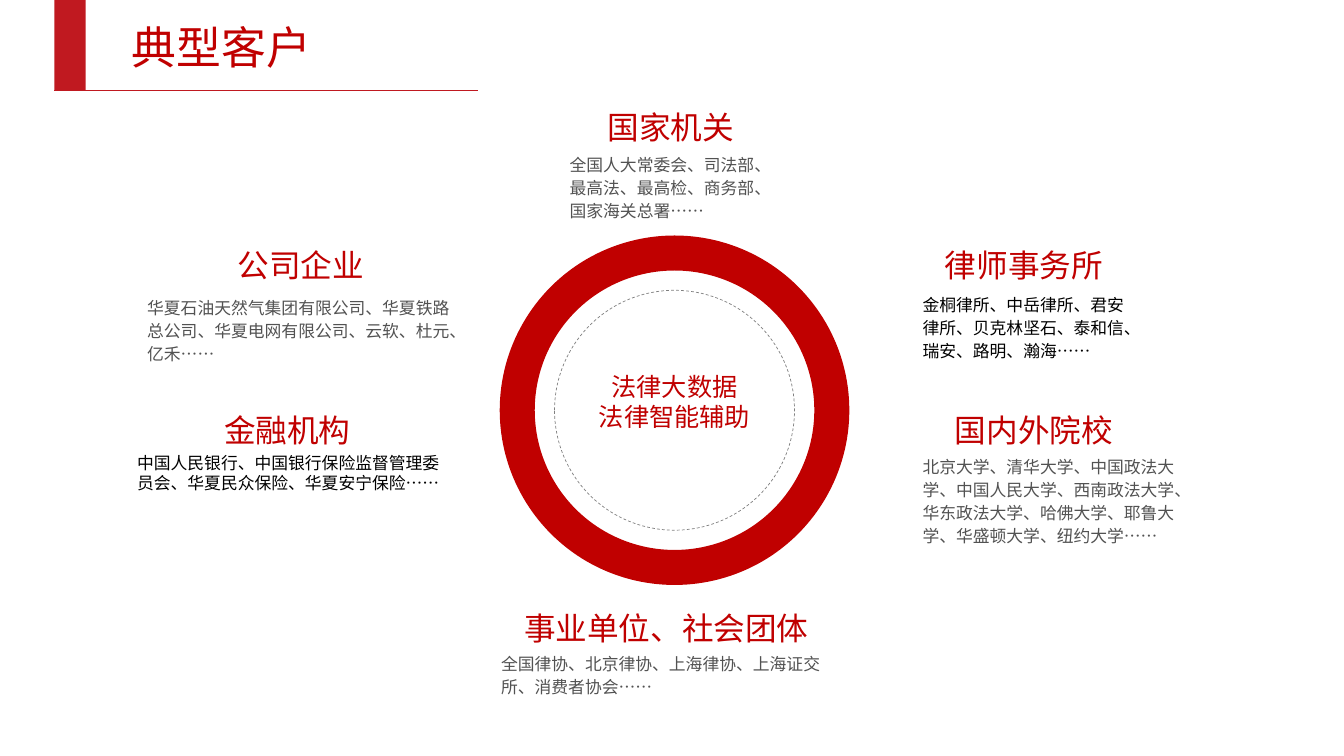
from pptx import Presentation
from pptx.dml.color import RGBColor
from pptx.enum.dml import MSO_LINE
from pptx.enum.shapes import MSO_CONNECTOR, MSO_SHAPE
from pptx.enum.text import PP_ALIGN
from pptx.oxml.ns import qn
from pptx.util import Inches, Pt
from lxml import etree

THEME = {
    "red": "C00000", "bar": "C01920", "grey": "525252", "black": "000000", "dash": "808080",
    "heading_font": "Noto Sans CJK SC", "body_font": "Calibri",
    "title": 32, "heading": 22.6, "core": 18, "body": 12,
}

TITLE = "典型客户"
CORE = ["法律大数据", "法律智能辅助"]
CLIENTS = [
    {"name": "公司企业", "name_at": (1.6, 2.51, 2.77), "list_at": (1.46, 2.93, 3.05, 1.09),
     "color": "grey", "spacing": 1.14,
     "list": "华夏石油天然气集团有限公司、华夏铁路总公司、华夏电网有限公司、云软、杜元、亿禾……"},
    {"name": "国家机关", "name_at": (5.65, 1.14, 2.01), "list_at": (5.65, 1.51, 2, 0.87),
     "color": "grey", "spacing": 1.14,
     "list": "全国人大常委会、司法部、最高法、最高检、商务部、国家海关总署……"},
    {"name": "国内外院校", "name_at": (9.25, 4.15, 2.01), "list_at": (9.15, 4.5, 2.5, 0.86),
     "color": "grey", "spacing": 1.14,
     "list": "北京大学、清华大学、中国政法大学、中国人民大学、西南政法大学、"
             "华东政法大学、哈佛大学、耶鲁大学、华盛顿大学、纽约大学……"},
    {"name": "律师事务所", "name_at": (9.15, 2.51, 2.01), "list_at": (9.15, 2.9, 2.12, 0.87),
     "color": "black", "spacing": 1.14,
     "list": "金桐律所、中岳律所、君安律所、贝克林坚石、泰和信、瑞安、路明、瀚海……"},
    {"name": "事业单位、社会团体", "name_at": (5.12, 6.11, 2.98), "list_at": (4.97, 6.46, 3.28, 0.86),
     "color": "grey", "spacing": 1.14,
     "list": "全国律协、北京律协、上海律协、上海证交所、消费者协会……"},
    {"name": "金融机构", "name_at": (1.53, 4.15, 2.64), "list_at": (1.36, 4.49, 3.15, 0.86),
     "color": "black", "spacing": 1,
     "list": "中国人民银行、中国银行保险监督管理委员会、华夏民众保险、华夏安宁保险……"},
]
NAME_HEIGHT = 0.25
RING_CENTER = (6.69, 4.07)
RING_DIAMETER, DASH_DIAMETER = 3.12, 2.38
CORE_TOP, CORE_HEIGHT = 3.63, 0.89
BAR_LEFT, BAR_WIDTH, BAR_HEIGHT, RULE_RIGHT = 0.54, 0.31, 0.9, 4.74


def color(name):
    return RGBColor.from_string(THEME[name])


def add_text(slide, lines, at, size, tint="red", font="heading_font",
             align=PP_ALIGN.LEFT, spacing=1, inset=True):
    frame = slide.shapes.add_textbox(*map(Inches, at)).text_frame
    frame.word_wrap = True
    if not inset:
        frame.margin_left = frame.margin_right = frame.margin_top = frame.margin_bottom = 0
    frame.text = "\n".join(lines)
    for paragraph in frame.paragraphs:
        paragraph.alignment = align
        paragraph.line_spacing = spacing
        paragraph.font.name = THEME[font]
        paragraph.font.size = Pt(THEME[size])
        paragraph.font.color.rgb = color(tint)


def add_circle(slide, diameter, tint, width):
    left, top = (center - diameter / 2 for center in RING_CENTER)
    circle = slide.shapes.add_shape(MSO_SHAPE.OVAL, *map(Inches, (left, top, diameter, diameter)))
    circle.shadow.inherit = False
    circle.fill.background()
    circle.line.color.rgb = color(tint)
    circle.line.width = Pt(width)
    return circle


def add_header(slide):
    bar = slide.shapes.add_shape(
        MSO_SHAPE.RECTANGLE, *map(Inches, (BAR_LEFT, 0, BAR_WIDTH, BAR_HEIGHT)))
    bar.shadow.inherit = False
    bar.fill.solid()
    bar.fill.fore_color.rgb = color("bar")
    bar.line.fill.background()
    rule = slide.shapes.add_connector(
        MSO_CONNECTOR.STRAIGHT, *map(Inches, (BAR_LEFT, BAR_HEIGHT, RULE_RIGHT, BAR_HEIGHT)))
    rule.line.color.rgb = color("bar")
    rule.line.width = Pt(0.5)
    etree.SubElement(rule._element.spPr, qn("a:effectLst"))
    add_text(slide, [TITLE], (1.21, 0.15, 2.51, 0.64), "title")


def main():
    deck = Presentation()
    deck.slide_width, deck.slide_height = Inches(13.33), Inches(7.5)
    slide = deck.slides.add_slide(deck.slide_layouts[6])

    for client in CLIENTS:
        add_text(slide, [client["list"]], client["list_at"], "body", client["color"],
                 "body_font", spacing=client["spacing"], inset=False)
        add_text(slide, [client["name"]], (*client["name_at"], NAME_HEIGHT), "heading",
                 align=PP_ALIGN.CENTER, spacing=0.8, inset=False)

    add_circle(slide, DASH_DIAMETER, "dash", 0.5).line.dash_style = MSO_LINE.DASH
    add_circle(slide, RING_DIAMETER, "red", 25)
    core_left = RING_CENTER[0] - DASH_DIAMETER / 2
    add_text(slide, CORE, (core_left, CORE_TOP, DASH_DIAMETER, CORE_HEIGHT), "core",
             align=PP_ALIGN.CENTER)
    add_header(slide)
    deck.save("out.pptx")


if __name__ == "__main__":
    main()
